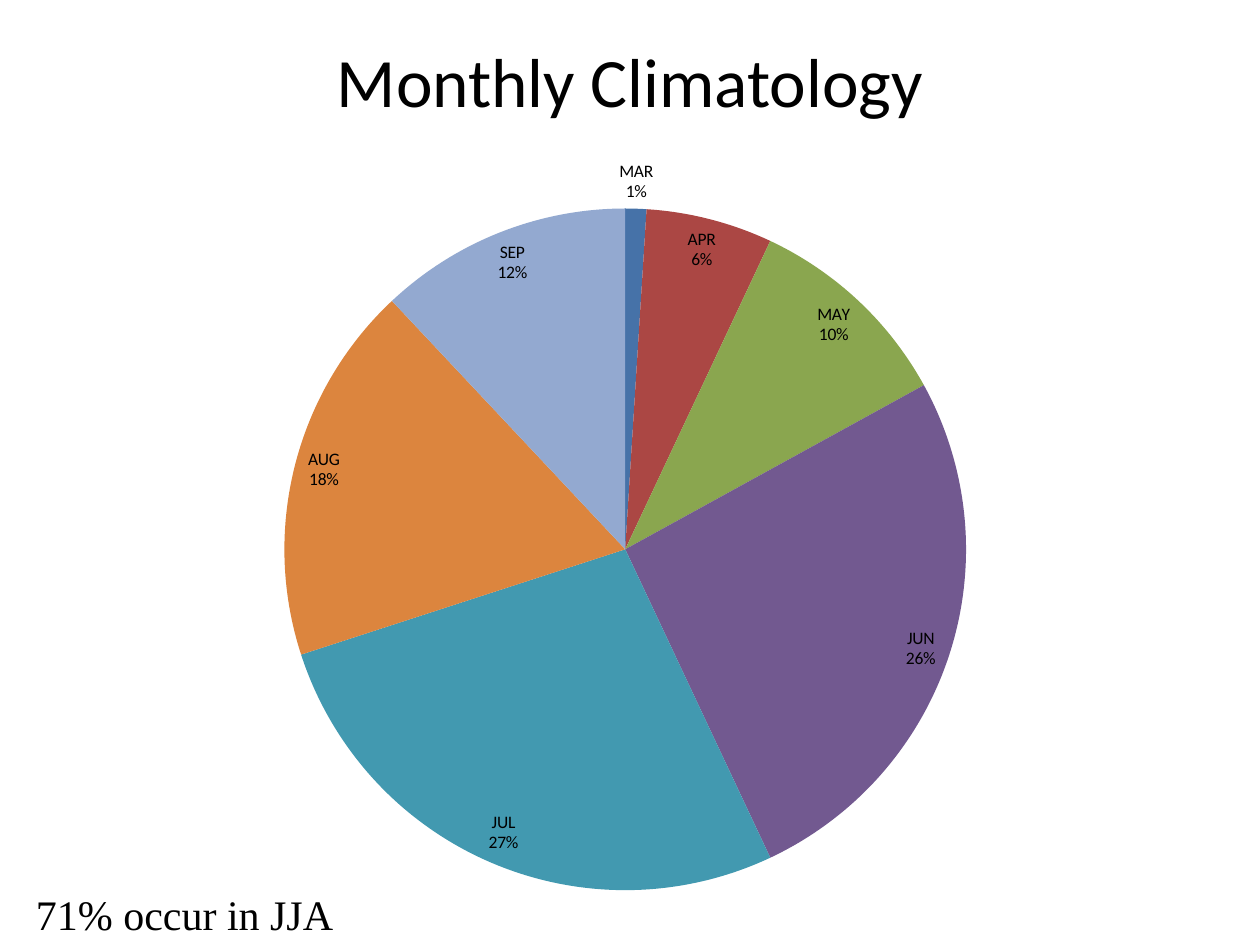
"""Build the monthly climatology slide with its pie chart."""
from dataclasses import dataclass
from typing import Any

from lxml import etree
from pptx import Presentation
from pptx import util as u
from pptx.chart.data import CategoryChartData
from pptx.dml.color import RGBColor
from pptx.enum import chart as charts, text

COLOURS = {
    "text": "000000", "MAR": "4672A8", "APR": "AB4744", "MAY": "8AA64F",
    "JUN": "725990", "JUL": "4299B0", "AUG": "DC853E", "SEP": "93A9D0",
}
PLOT_AREA = {"x": 0.21, "y": 0.08, "w": 0.58, "h": 0.89}


@dataclass
class Frame:
    """Position and size in centimetres."""
    left: float
    top: float
    width: float
    height: float

    def lengths(self) -> list[u.Length]:
        """Return the four lengths in drawing order."""
        return [u.Cm(value) for value in (self.left, self.top, self.width, self.height)]


@dataclass
class Month:
    """One slice of the pie."""
    name: str
    share: int


MONTHS = [
    Month("MAR", 1), Month("APR", 6), Month("MAY", 10), Month("JUN", 26),
    Month("JUL", 27), Month("AUG", 18), Month("SEP", 12),
]


def apply_format(target: Any, values: dict[str, Any]) -> None:
    """Set each named attribute on the target."""
    for name, value in values.items():
        setattr(target, name, value)


def format_font(font: Any, name: str, size: float) -> None:
    """Give a font its family, size and colour."""
    apply_format(font, {"name": name, "size": u.Pt(size)})
    font.color.rgb = RGBColor.from_string(COLOURS["text"])


def write_text(box: Any, wording: str, font: str, size: float, frame_format: dict[str, Any]) -> None:
    """Fill a box with one centred line."""
    apply_format(box.text_frame, frame_format)
    para = box.text_frame.paragraphs[0]
    para.alignment = text.PP_ALIGN.CENTER
    span = para.add_run()
    span.text = wording
    format_font(span.font, font, size)


def place_plot(chart: Any) -> None:
    """Fix the inner plot area as fractions of the chart."""
    area = chart.plots[0]._element.getparent()
    namespace = etree.QName(area).namespace
    for old in area.findall(f"{{{namespace}}}layout"):
        area.remove(old)
    layout = etree.Element(f"{{{namespace}}}layout")
    manual = etree.SubElement(layout, f"{{{namespace}}}manualLayout")
    settings = {"layoutTarget": "inner", "xMode": "edge", "yMode": "edge", **PLOT_AREA}
    for name, value in settings.items():
        etree.SubElement(manual, f"{{{namespace}}}{name}", val=str(value))
    area.insert(0, layout)


def add_pie(page: Any, frame: Frame, months: list[Month]) -> None:
    """Draw the monthly shares as a labelled pie."""
    data = CategoryChartData()
    data.categories = [month.name for month in months]
    data.add_series("Series 1", [month.share for month in months])
    chart = page.shapes.add_chart(charts.XL_CHART_TYPE.PIE, *frame.lengths(), data).chart
    apply_format(chart, {"has_legend": False, "has_title": False})
    format_font(chart.font, "Calibri", 10)
    plot = chart.plots[0]
    apply_format(plot, {"vary_by_categories": True, "has_data_labels": True})
    apply_format(plot.data_labels, {
        "show_category_name": True, "show_percentage": True, "show_value": False,
        "number_format": "0%", "number_format_is_linked": False,
        "position": charts.XL_LABEL_POSITION.BEST_FIT,
    })
    for index, month in enumerate(months):
        fill = plot.series[0].points[index].format.fill
        fill.solid()
        fill.fore_color.rgb = RGBColor.from_string(COLOURS[month.name])
    place_plot(chart)


def main() -> None:
    """Assemble and save the deck."""
    deck = Presentation()
    apply_format(deck, {"slide_width": u.Cm(25.4), "slide_height": u.Cm(19.05)})
    page = deck.slides.add_slide(deck.slide_layouts[5])
    title = page.shapes.title
    names = ("left", "top", "width", "height")
    apply_format(title, dict(zip(names, Frame(1.27, 0.76, 22.86, 3.18).lengths())))
    write_text(title, "Monthly Climatology", "Calibri", 39.6,
               {"vertical_anchor": text.MSO_ANCHOR.TOP, "margin_top": 0})
    add_pie(page, Frame(0.64, 2.97, 23.93, 15.44), MONTHS)
    note = page.shapes.add_textbox(*Frame(0.43, 17.78, 6.58, 1.27).lengths())
    write_text(note, "71% occur in JJA", "Times New Roman", 24,
               {"word_wrap": False, "auto_size": text.MSO_AUTO_SIZE.SHAPE_TO_FIT_TEXT})
    deck.save("out.pptx")


if __name__ == "__main__":
    main()
